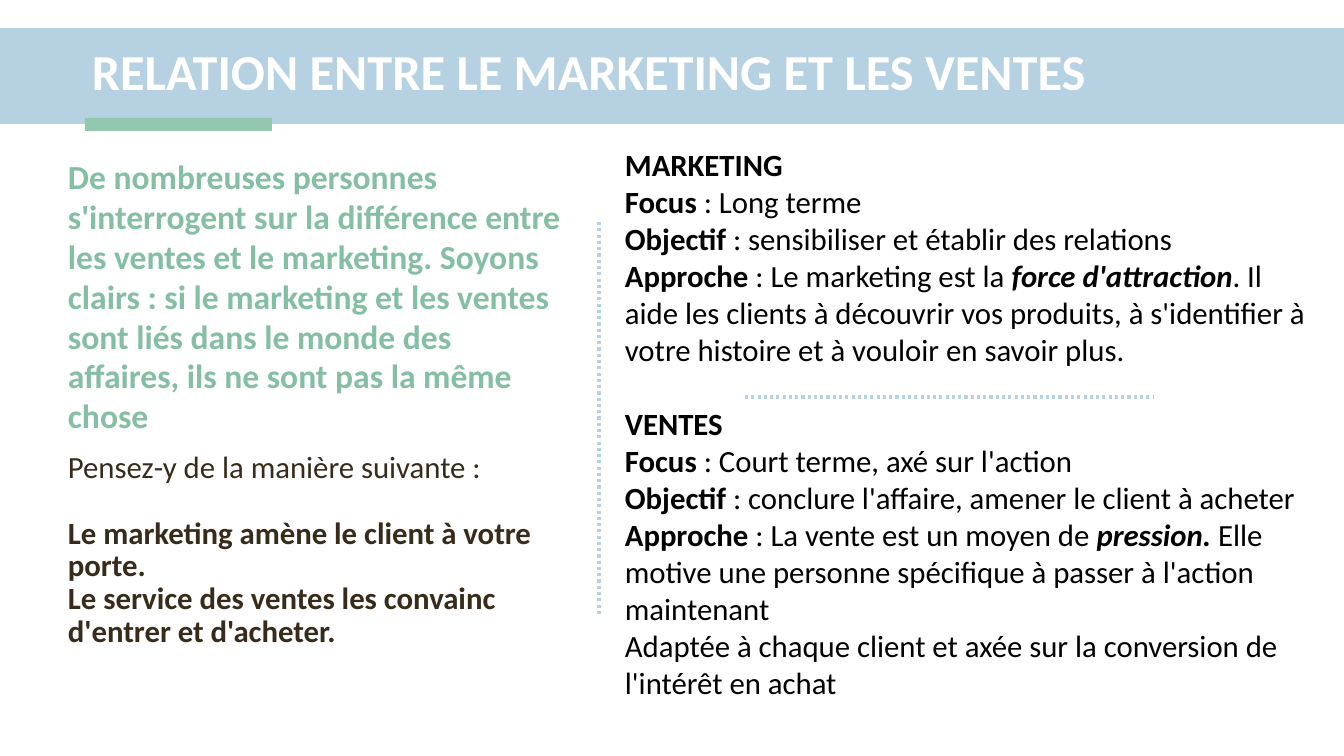
from lxml.etree import SubElement
from pptx import Presentation
from pptx.dml.color import RGBColor
from pptx.enum.dml import MSO_LINE
from pptx.enum.shapes import MSO_CONNECTOR, MSO_SHAPE
from pptx.enum.text import MSO_ANCHOR
from pptx.oxml.ns import qn
from pptx.util import Emu, Pt

PX_PER_INCH = 100.8
FONT = "Calibri"
BLUE = RGBColor(0xB6, 0xD1, 0xE1)
GREEN = RGBColor(0x94, 0xC7, 0xB0)
TEXT_GREEN = RGBColor(0x84, 0xBF, 0xA4)
BROWN = RGBColor(0x38, 0x2B, 0x1B)
BLACK = RGBColor(0, 0, 0)
WHITE = RGBColor(0xFF, 0xFF, 0xFF)

TITLE = "RELATION ENTRE LE MARKETING ET LES VENTES"
INTRO = ("De nombreuses personnes s'interrogent sur la différence entre les ventes "
         "et le marketing. Soyons clairs : si le marketing et les ventes sont liés "
         "dans le monde des affaires, ils ne sont pas la même chose")

# Each paragraph is a list of (text, style); style letters: b bold, i italic
SUMMARY = [
    [("Pensez-y de la manière suivante :", "")],
    [("Le marketing amène le client à votre porte.", "b")],
    [("Le service des ventes les convainc d'entrer et d'acheter.", "b")],
]
COMPARISON = [
    [("MARKETING", "b")],
    [("Focus ", "b"), (": Long terme", "")],
    [("Objectif ", "b"), (": sensibiliser et établir des relations", "")],
    [("Approche ", "b"), (": Le marketing est la ", ""), ("force d'attraction", "bi"),
     (". Il aide les clients à découvrir vos produits, à s'identifier à votre "
      "histoire et à vouloir en savoir plus.", "")],
    [("VENTES", "b")],
    [("Focus ", "b"), (": Court terme, axé sur l'action", "")],
    [("Objectif ", "b"), (": conclure l'affaire, amener le client à acheter", "")],
    [("Approche ", "b"), (": La vente est un moyen de ", ""), ("pression. ", "bi"),
     ("Elle motive une personne spécifique à passer à l'action maintenant", "")],
    [("Adaptée à chaque client et axée sur la conversion de l'intérêt en achat", "")],
]


def px(length):
    return Emu(round(length * 914400 / PX_PER_INCH))


def add_bar(slide, left, top, width, height, color):
    bar = slide.shapes.add_shape(MSO_SHAPE.RECTANGLE, px(left), px(top), px(width), px(height))
    bar.shadow.inherit = False
    bar.fill.solid()
    bar.fill.fore_color.rgb = color
    bar.line.fill.background()


def add_dotted_line(slide, x1, y1, x2, y2):
    divider = slide.shapes.add_connector(MSO_CONNECTOR.STRAIGHT, px(x1), px(y1), px(x2), px(y2))
    divider.line.color.rgb = BLUE
    divider.line.width = Pt(2.25)
    divider.line.dash_style = MSO_LINE.ROUND_DOT
    SubElement(divider._element.spPr, qn("a:effectLst"))


def add_text(slide, box, paragraphs, size, color, spacing=None, gap_at=None, gap=0,
             anchor=MSO_ANCHOR.TOP):
    """Write paragraphs of styled runs, with extra space before paragraph gap_at."""
    frame = slide.shapes.add_textbox(*map(px, box)).text_frame
    frame.word_wrap = True
    frame.vertical_anchor = anchor
    for index, parts in enumerate(paragraphs):
        paragraph = frame.paragraphs[0] if index == 0 else frame.add_paragraph()
        paragraph.line_spacing = spacing
        if index == gap_at:
            paragraph.space_before = Pt(gap)
        for text, style in parts:
            run = paragraph.add_run()
            run.text = text
            run.font.name = FONT
            run.font.size = Pt(size)
            run.font.color.rgb = color
            run.font.bold = "b" in style
            run.font.italic = "i" in style


def main():
    prs = Presentation()
    prs.slide_width, prs.slide_height = px(1344), px(756)
    slide = prs.slides.add_slide(prs.slide_layouts[6])

    # Title band
    add_bar(slide, 0, 28, 1344, 96, BLUE)
    add_bar(slide, 85, 118, 187, 13, GREEN)
    add_text(slide, (82, 34, 1203, 80), [[(TITLE, "b")]], 36, WHITE, 0.9,
             anchor=MSO_ANCHOR.MIDDLE)

    # Left column
    add_text(slide, (58, 152, 513, 290), [[(INTRO, "b")]], 24, TEXT_GREEN, Pt(28.4))
    add_text(slide, (58, 447, 508, 210), SUMMARY, 22, BROWN, Pt(23.4), gap_at=1, gap=23.4)

    # Right column
    add_text(slide, (615, 141, 710, 565), COMPARISON, 22, BLACK, gap_at=4, gap=26.4)

    # Dividers
    add_dotted_line(slide, 599, 614, 599, 221)
    add_dotted_line(slide, 745, 397, 1154, 397)

    prs.save("out.pptx")


if __name__ == "__main__":
    main()
